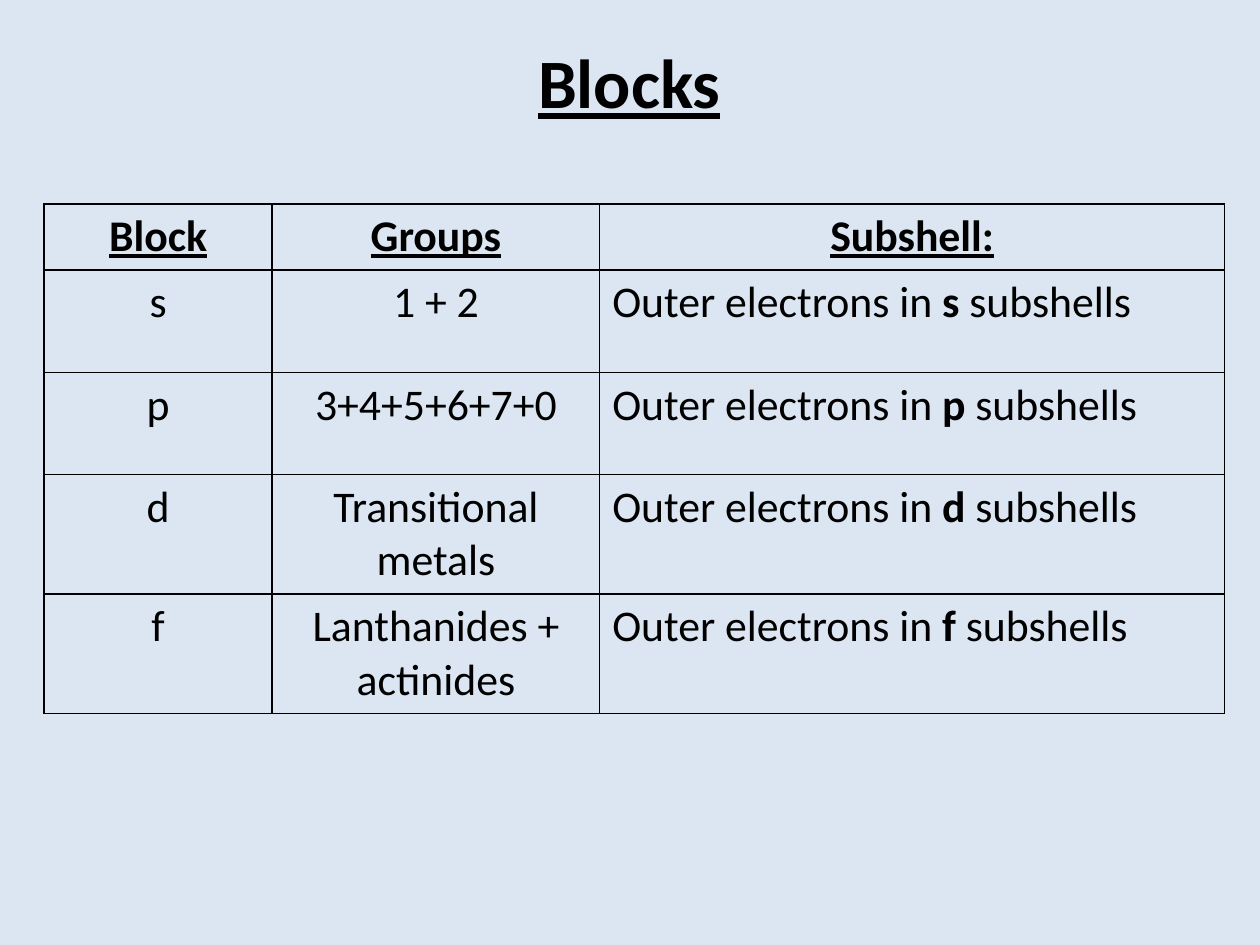
from lxml import etree
from pptx import Presentation
from pptx.dml.color import RGBColor
from pptx.enum.text import MSO_ANCHOR, PP_ALIGN
from pptx.oxml.ns import qn
from pptx.util import Pt

CENTER, LEFT = PP_ALIGN.CENTER, PP_ALIGN.LEFT
MIDDLE = MSO_ANCHOR.MIDDLE
TITLE_ONLY = 5
FONT = "Calibri"
COLORS = {"background": "DCE6F2", "ink": "000000"}

HEADINGS = ["Block", "Groups", "Subshell:"]
BLOCKS = [
    ("s", "1 + 2"),
    ("p", "3+4+5+6+7+0"),
    ("d", "Transitional metals"),
    ("f", "Lanthanides + actinides"),
]
COLUMN_WIDTHS = [130.3, 187.2, 357.1]
HEADER_HEIGHT, ROW_HEIGHT = 33.8, 58.5


def add_span(para, text, size, bold=False, underline=False):
    span = para.add_run()
    span.text = text
    font = span.font
    font.name, font.size = FONT, Pt(size)
    font.bold, font.underline = bold, underline
    font.color.rgb = RGBColor.from_string(COLORS["ink"])


def add_title(page, text):
    title = page.shapes.title
    title.left, title.top = Pt(36), Pt(21.6)
    title.width, title.height = Pt(647.3), Pt(49.7)
    title.text_frame.vertical_anchor = MIDDLE
    para = title.text_frame.paragraphs[0]
    para.alignment = CENTER
    add_span(para, text, 39.6, bold=True, underline=True)


def set_borders(cell, width=1):
    properties = cell._tc.get_or_add_tcPr()
    for position, side in enumerate(("a:lnL", "a:lnR", "a:lnT", "a:lnB")):
        line = etree.Element(qn(side), w=str(Pt(width)))
        fill = etree.SubElement(line, qn("a:solidFill"))
        etree.SubElement(fill, qn("a:srgbClr"), val=COLORS["ink"])
        properties.insert(position, line)


def fill_cell(cell, spans, alignment=CENTER, underline=False):
    """Write (text, bold) spans into a clear, bordered cell."""
    cell.fill.background()
    set_borders(cell)
    para = cell.text_frame.paragraphs[0]
    para.alignment = alignment
    for text, bold in spans:
        add_span(para, text, 25, bold, underline)


def add_blocks_table(page):
    height = HEADER_HEIGHT + ROW_HEIGHT * len(BLOCKS)
    frame = page.shapes.add_table(
        len(BLOCKS) + 1, len(HEADINGS),
        Pt(25.2), Pt(116.6), Pt(sum(COLUMN_WIDTHS)), Pt(height))
    table = frame.table
    table.first_row = table.horz_banding = False
    for column, width in zip(table.columns, COLUMN_WIDTHS):
        column.width = Pt(width)
    for index, row in enumerate(table.rows):
        row.height = Pt(ROW_HEIGHT if index else HEADER_HEIGHT)

    # Heading row
    for column, heading in enumerate(HEADINGS):
        fill_cell(table.cell(0, column), [(heading, True)], underline=True)

    # One row per block
    for row, (block, groups) in enumerate(BLOCKS, start=1):
        fill_cell(table.cell(row, 0), [(block, False)])
        fill_cell(table.cell(row, 1), [(groups, False)])
        subshell = [("Outer electrons in ", False), (block, True),
                    (" subshells", False)]
        fill_cell(table.cell(row, 2), subshell, LEFT)


def main():
    deck = Presentation()
    deck.slide_width, deck.slide_height = Pt(720), Pt(540)
    page = deck.slides.add_slide(deck.slide_layouts[TITLE_ONLY])
    background = page.background.fill
    background.solid()
    background.fore_color.rgb = RGBColor.from_string(COLORS["background"])
    add_title(page, "Blocks")
    add_blocks_table(page)
    deck.save("out.pptx")


if __name__ == "__main__":
    main()
